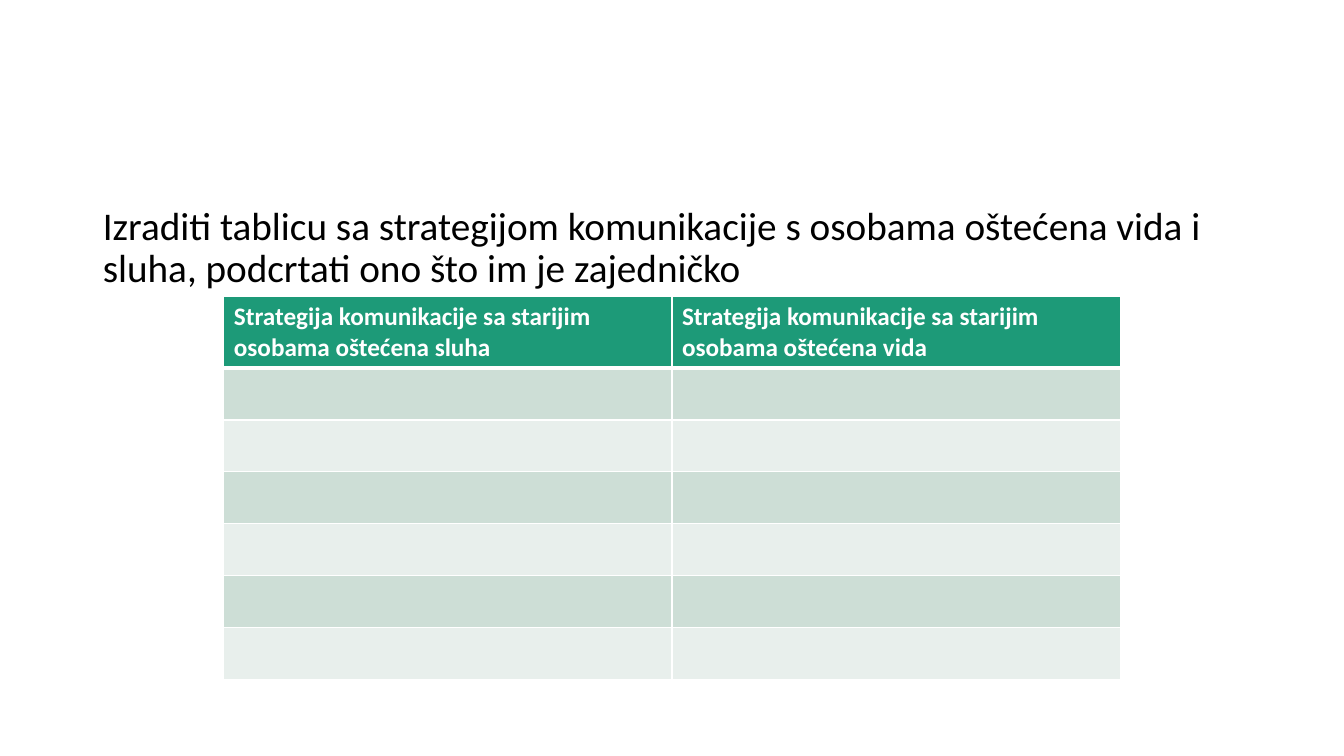
import pptx
import pptx.util
import pptx.dml.color
import pptx.enum.text
import pptx.oxml
import pptx.oxml.ns

inch = pptx.util.Inches
tint = pptx.dml.color.RGBColor.from_string
hues = {"head": "1D9A78", "odd": "CDDED6", "even": "E8EFEC", "white": "FFFFFF", "black": "000000"}
heads = [
    "Strategija komunikacije sa starijim osobama oštećena sluha",
    "Strategija komunikacije sa starijim osobama oštećena vida",
]
task = "Izraditi tablicu sa strategijom komunikacije s osobama oštećena vida i sluha, podcrtati ono što im je zajedničko"


def style(font, size, hue, bold):
    form = {"name": "Calibri", "size": pptx.util.Pt(size), "bold": bold}
    for key, val in form.items():
        setattr(font, key, val)
    font.color.rgb = tint(hues[hue])


def edge(cell, side, width):
    name = pptx.oxml.ns.nsdecls("a")
    return pptx.oxml.parse_xml(
        f'<a:{side} {name} w="{pptx.util.Pt(width)}"><a:solidFill>'
        f'<a:srgbClr val="{hues["white"]}"/></a:solidFill></a:{side}>'
    )


deck = pptx.Presentation()
deck.slide_width, deck.slide_height = inch(13.33), inch(7.5)
slide = deck.slides.add_slide(deck.slide_layouts[1])
title = slide.shapes.title
title.element.getparent().remove(title.element)

body = slide.placeholders[1]
place = {"left": 0.92, "top": 2, "width": 11.5, "height": 4.76}
for key, val in place.items():
    setattr(body, key, inch(val))
frame = body.text_frame
frame.text = task
form = {
    "word_wrap": True,
    "auto_size": pptx.enum.text.MSO_AUTO_SIZE.NONE,
    "vertical_anchor": pptx.enum.text.MSO_ANCHOR.TOP,
}
for key, val in form.items():
    setattr(frame, key, val)
para = frame.paragraphs[0]
para.line_spacing = 0.9
para.space_before = pptx.util.Pt(10)
props = para._p.get_or_add_pPr()
props.set("marL", "0")
props.set("indent", "0")
props.append(pptx.oxml.parse_xml(f'<a:buNone {pptx.oxml.ns.nsdecls("a")}/>'))
style(para.runs[0].font, 28, "black", False)

count = 7
first, total = 0.7, 3.79
grid = slide.shapes.add_table(
    count, len(heads), inch(2.22), inch(2.94), inch(8.89), inch(total)
).table
for row in range(count):
    grid.rows[row].height = inch(first if row == 0 else (total - first) / (count - 1))
    for col, head in enumerate(heads):
        cell = grid.cell(row, col)
        sides = {"lnL": 1, "lnR": 1, "lnT": 3 if row == 1 else 1, "lnB": 3 if row == 0 else 1}
        for side, width in sides.items():
            cell._tc.get_or_add_tcPr().append(edge(cell, side, width))
        hue = "head" if row == 0 else "odd" if row % 2 else "even"
        cell.fill.solid()
        cell.fill.fore_color.rgb = tint(hues[hue])
        if row == 0:
            cell.text = head
            style(cell.text_frame.paragraphs[0].runs[0].font, 18, "white", True)

deck.save("out.pptx")
